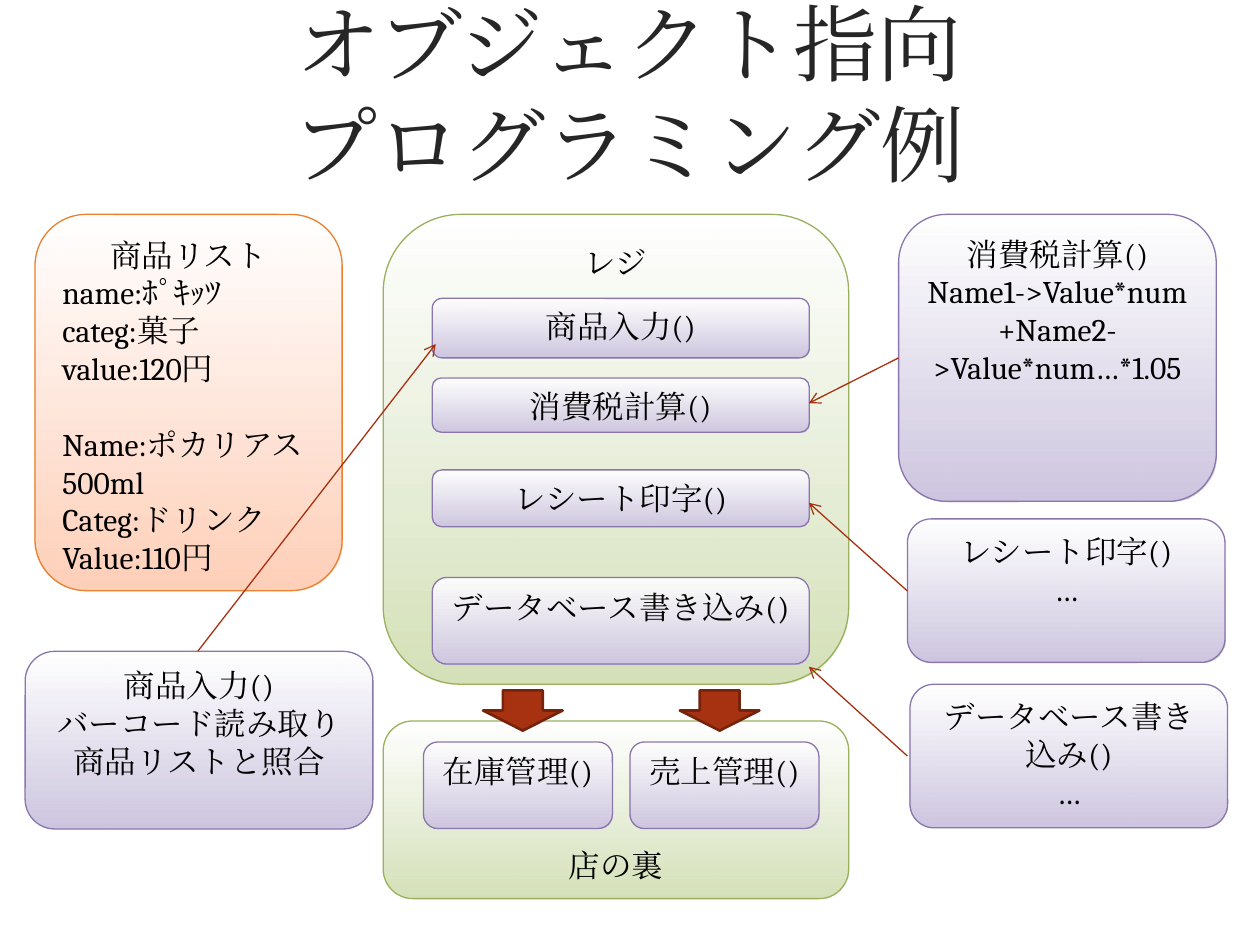
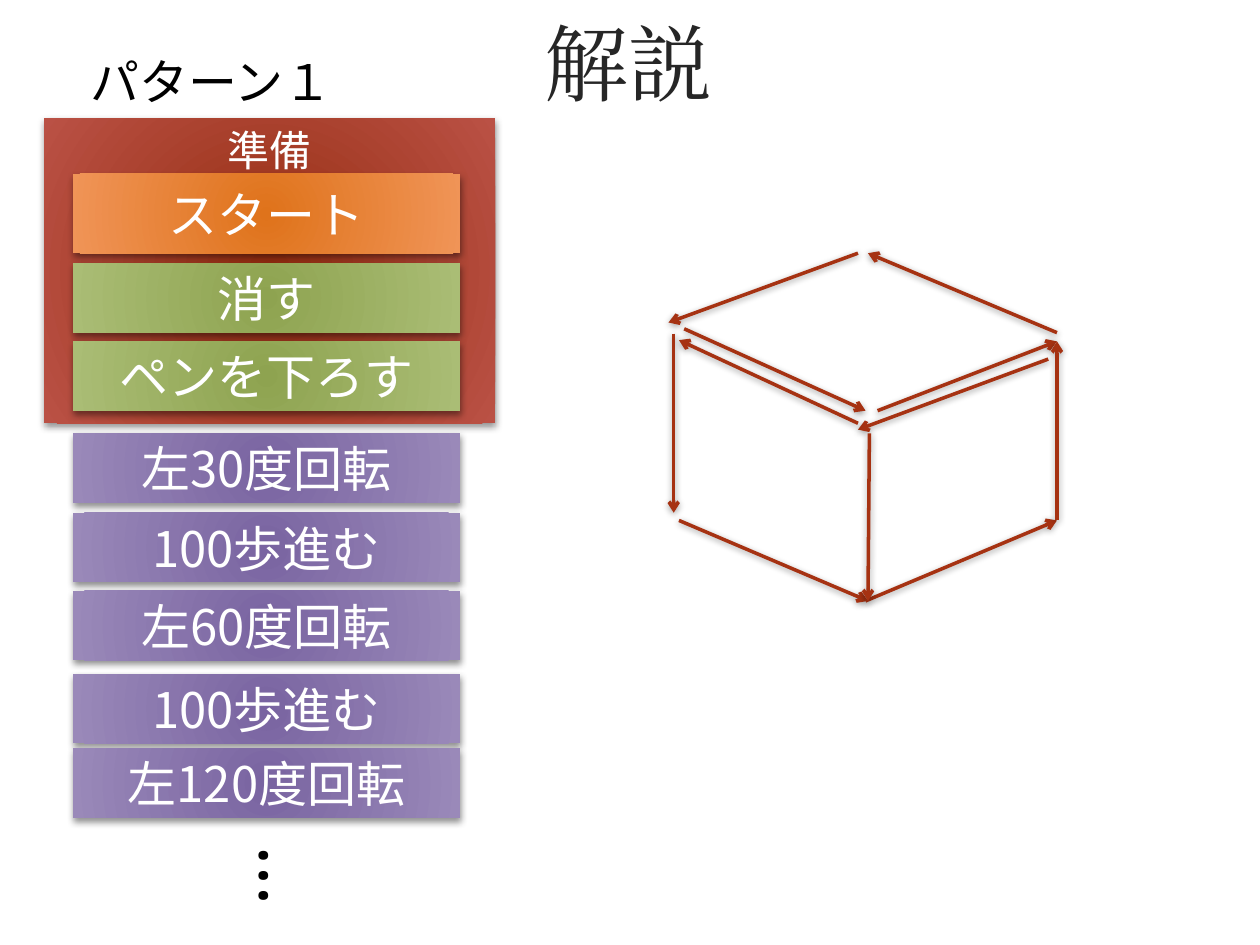
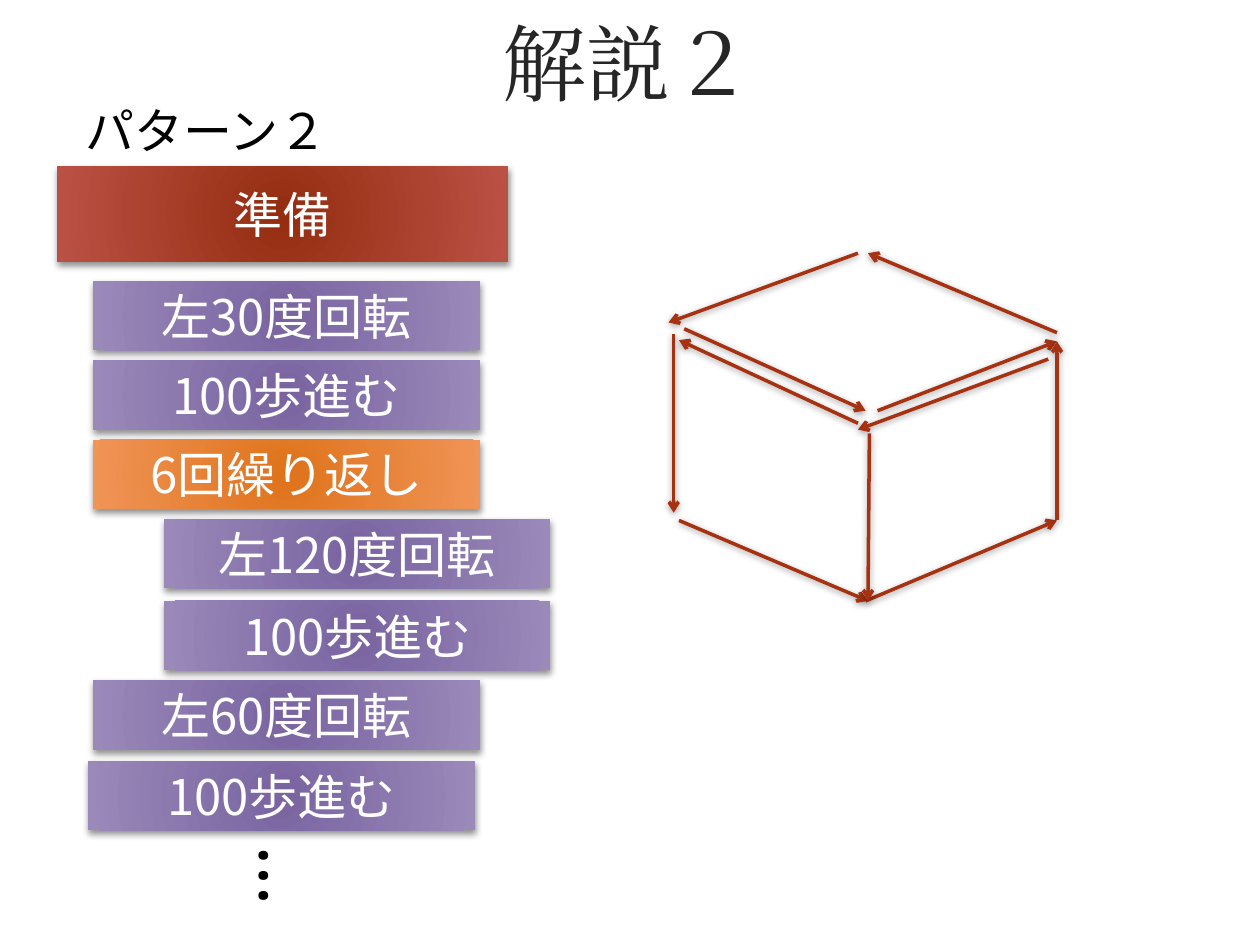
"""Build three slides on object-oriented programming and drawing a cube."""
from dataclasses import dataclass

import lxml.etree
import pptx
import pptx.dml.color
import pptx.enum.dml
import pptx.enum.shapes
import pptx.enum.text
import pptx.oxml.ns
import pptx.util

Pt = pptx.util.Pt
qn = pptx.oxml.ns.qn
SHAPE = pptx.enum.shapes.MSO_SHAPE
ANCHOR = pptx.enum.text.MSO_ANCHOR
ALIGN = pptx.enum.text.PP_ALIGN


@dataclass(frozen=True)
class Theme:
    """Colours, fonts and type sizes shared by the slides."""

    ink: str = "000000"
    title_ink: str = "262626"
    white: str = "FFFFFF"
    red: str = "A63212"
    red_edge: str = "75230C"
    serif: str = "Cambria"
    sans: str = "Noto Sans CJK JP"
    title: int = 48
    step: int = 28
    group: int = 24
    body: int = 18
    body_line: float = 21.7
    green_card: tuple = ("D5E1B9", "9BB05E")
    orange_card: tuple = ("FFD0B9", "E68230")
    purple_card: tuple = ("CEC6E0", "8976AC")
    red_block: tuple = ("952D10", "BA5145")
    orange_block: tuple = ("DF731B", "F09457")
    green_block: tuple = ("8EA350", "AABD75")
    purple_block: tuple = ("7964A1", "9A89B9")


T = Theme()
TITLE_BOX = (42.5, 0, 633, 71)
CUBE_BOX = (382, 144.7)
DOTS_BOX = (127.4, 473.8, 72.7, 48.2)
STEP_SIZE = (221, 39.6)
CUBE_EDGES = [
    ((119.5, 90), (222, 50.4)),
    ((222, 45.4), (114, 0)),
    ((108.3, 0), (0, 39.6)),
    ((3, 46), (3, 148.3)),
    ((6, 152.7), (114, 198.7)),
    ((112.6, 198.7), (222, 152.7)),
    ((222, 152.7), (222, 50.4)),
    ((217, 60.5), (108.3, 100.8)),
    ((9, 43.2), (112.6, 90)),
    ((108.3, 97.2), (6, 49.7)),
    ((114.8, 103), (114, 198.7)),
]


def rgb(value):
    """Return a colour object for a hex string."""
    return pptx.dml.color.RGBColor.from_string(value)


def assign(obj, values):
    """Set each named attribute of an object."""
    for name, value in values.items():
        setattr(obj, name, value)


def add_xml(parent, tag, **attrs):
    """Append a DrawingML element with the given attributes."""
    return lxml.etree.SubElement(parent, qn(tag), {k: str(v) for k, v in attrs.items()})


def write(s, lines, size, font, color, align=ALIGN.CENTER, anchor=ANCHOR.MIDDLE):
    """Fill a shape with paragraphs in one type style."""
    tf = s.text_frame
    assign(tf, {"word_wrap": True, "vertical_anchor": anchor})
    for i, line in enumerate(lines):
        p = tf.paragraphs[0] if i == 0 else tf.add_paragraph()
        assign(p, {"text": line, "alignment": align})
        for r in p.runs:
            assign(r.font, {"size": Pt(size), "name": font})
            r.font.color.rgb = rgb(color)
            add_xml(r.font._element, "a:ea", typeface=font)
    return tf


def add_shadow(effects, alpha, distance, angle):
    """Add a soft black shadow to an effect list."""
    shadow = add_xml(effects, "a:outerShdw", blurRad=Pt(4), dist=Pt(distance),
                     dir=angle * 60000, rotWithShape=0)
    color = add_xml(shadow, "a:srgbClr", val=T.ink)
    add_xml(color, "a:alpha", val=alpha * 1000)


def add_gradient(s, first, last):
    """Give a shape a downward two-colour gradient and return its element."""
    s.fill.gradient()
    s.fill.gradient_angle = 270
    for stop, color in zip(s.fill.gradient_stops, (first, last)):
        stop.color.rgb = rgb(color)
    return s.element.spPr.find(qn("a:gradFill"))


def add_box(sl, kind, box):
    """Add a preset shape without the default shadow."""
    s = sl.shapes.add_shape(kind, *map(Pt, box))
    s.shadow.inherit = False
    return s


def add_text(sl, box, lines, size, font, color, **layout):
    """Add a text box and return it."""
    s = sl.shapes.add_textbox(*map(Pt, box))
    write(s, lines, size, font, color, **layout)
    return s


def add_title(sl, text, box=TITLE_BOX):
    """Add the slide title."""
    add_text(sl, box, [text], T.title, T.serif, T.title_ink)


def add_card(sl, box, lines, colors=T.purple_card, anchor=ANCHOR.TOP):
    """Add a rounded card that fades from white."""
    s = add_box(sl, SHAPE.ROUNDED_RECTANGLE, box)
    grad = add_gradient(s, T.white, colors[0])
    add_xml(grad.find(".//" + qn("a:srgbClr")), "a:alpha", val=94000)
    s.line.color.rgb = rgb(colors[1])
    s.line.width = Pt(0.75)
    return write(s, lines, T.body, T.serif, T.ink, anchor=anchor)


def add_block(sl, box, text, colors, size=T.step, anchor=ANCHOR.MIDDLE):
    """Add a shadowed command block with a radial gradient."""
    s = add_box(sl, SHAPE.RECTANGLE, box)
    grad = add_gradient(s, *colors)
    grad.remove(grad.find(qn("a:lin")))
    radial = add_xml(grad, "a:path", path="circle")
    add_xml(radial, "a:fillToRect", l=40000, t=100000, r=40000, b=100000)
    s.line.fill.background()
    add_shadow(s.element.spPr.find(qn("a:effectLst")), 44, 2, 84)
    write(s, [text], size, T.sans, T.white, anchor=anchor)


def add_arrow(sl, start, end, width=0.75, shadow=False):
    """Add a straight red arrow."""
    s = sl.shapes.add_connector(pptx.enum.shapes.MSO_CONNECTOR.STRAIGHT,
                                *map(Pt, (*start, *end)))
    s.line.color.rgb = rgb(T.red)
    s.line.width = Pt(width)
    spPr = s._element.spPr
    add_xml(spPr.find(qn("a:ln")), "a:tailEnd", type="arrow")
    effects = add_xml(spPr, "a:effectLst")
    if shadow:
        add_shadow(effects, 37, 1, 90)


def add_register(sl, box):
    """Draw the register and its four methods."""
    x, y = box[:2]
    add_card(sl, box, ["レジ"], T.green_card)
    methods = [("商品入力()", 48, 34), ("消費税計算()", 93.5, 31),
               ("レシート印字()", 146, 32.5), ("データベース書き込み()", 207.5, 49.5)]
    for name, top, height in methods:
        add_card(sl, (x + 28, y + top, 215.5, height), [name])


def add_back_office(sl, box):
    """Draw the back office with its two methods and the arrows into it."""
    x, y = box[:2]
    add_card(sl, box, ["店の裏"], T.green_card, ANCHOR.BOTTOM)
    for i, name in enumerate(["在庫管理()", "売上管理()"]):
        add_card(sl, (x + 23 + 118 * i, y + 12, 108, 49.5), [name])
        s = add_box(sl, SHAPE.DOWN_ARROW, (x + 57 + 112.5 * i, y - 17.5, 45.5, 23))
        s.fill.solid()
        s.fill.fore_color.rgb = rgb(T.red)
        s.line.color.rgb = rgb(T.red_edge)
        s.line.width = Pt(1.5)


def add_product_list(sl, box):
    """Draw the product list with left-aligned records."""
    tf = add_card(sl, box, ["商品リスト", "name:ﾎﾟｷｯﾂ", "categ:菓子", "value:120円",
                            "Name:ポカリアス500ml", "Categ:ドリンク", "Value:110円"],
                  T.orange_card)
    for p in tf.paragraphs[1:]:
        p.alignment = ALIGN.LEFT
    tf.paragraphs[4].space_before = Pt(T.body_line)


def add_cube(sl, box):
    """Draw the cube as a path of arrows."""
    x, y = box
    for (x1, y1), (x2, y2) in CUBE_EDGES:
        add_arrow(sl, (x + x1, y + y1), (x + x2, y + y2), 2, True)


def add_steps(sl, box, steps):
    """Place command blocks at their offsets from a corner."""
    x, y = box
    for text, colors, left, top in steps:
        add_block(sl, (x + left, y + top, *STEP_SIZE), text, colors)


def objects_slide(sl):
    """Build the object diagram slide."""
    add_title(sl, "オブジェクト指向\vプログラミング例", (43, 17.3, 633, 71))
    add_back_office(sl, (219, 412, 266, 101.5))
    add_product_list(sl, (20, 122.5, 175.5, 215))
    add_register(sl, (219, 122.5, 266, 268.5))
    details = [
        ((513.5, 122.5, 181.5, 164),
         ["消費税計算()", "Name1->Value*num", "+Name2->Value*num…*1.05"]),
        ((518.5, 296.5, 181.5, 82), ["レシート印字()", "…"]),
        ((14.4, 372.2, 198.7, 101.5),
         ["商品入力()", "バーコード読み取り", "商品リストと照合"]),
        ((520, 391, 181.5, 82), ["データベース書き込み()", "…"]),
    ]
    for box, lines in details:
        add_card(sl, box, lines)
    for start, end in [((113, 372.2), (249, 196.6)), ((513.5, 204.5), (462.2, 230.4)),
                       ((518.5, 337.7), (462.2, 287.3)), ((518.5, 432), (462.2, 381))]:
        add_arrow(sl, start, end)


def pattern_slide(sl, title, label, label_box):
    """Build the title, label, cube and trailing dots of a pattern slide."""
    add_title(sl, title)
    add_text(sl, label_box, [label], T.step, T.sans, T.ink,
             align=ALIGN.LEFT, anchor=ANCHOR.TOP)
    s = add_text(sl, DOTS_BOX, ["…"], T.title, T.serif, T.ink,
                 align=ALIGN.LEFT, anchor=ANCHOR.TOP)
    s.element.txBody.find(qn("a:bodyPr")).set("vert", "eaVert")
    add_cube(sl, CUBE_BOX)


def first_pattern_slide(sl):
    """Build the slide that lists every step."""
    pattern_slide(sl, "解説", "パターン１", (44.6, 26, 238, 41))
    add_block(sl, (25.2, 67.7, 257.8, 174.2), "準備", T.red_block, T.group, ANCHOR.TOP)
    add_block(sl, (41.8, 99.4, 221, 45.4), "スタート", T.orange_block)
    add_steps(sl, (41.8, 150.5), [
        ("消す", T.green_block, 0, 0),
        ("ペンを下ろす", T.green_block, 0, 44.6),
        ("左30度回転", T.purple_block, 0, 97.2),
        ("100歩進む", T.purple_block, 0, 142.5),
        ("左60度回転", T.purple_block, 0, 187.2),
        ("100歩進む", T.purple_block, 0, 234.7),
        ("左120度回転", T.purple_block, 0, 277.2),
    ])


def second_pattern_slide(sl):
    """Build the slide that uses a loop."""
    pattern_slide(sl, "解説２", "パターン２", (41.8, 54, 238, 41))
    add_block(sl, (32.4, 95, 257.8, 54.7), "準備", T.red_block)
    add_steps(sl, (53.3, 160.6), [
        ("左30度回転", T.purple_block, 0, 0),
        ("100歩進む", T.purple_block, 0, 45.3),
        ("6回繰り返し", T.orange_block, 0, 90.6),
        ("左120度回転", T.purple_block, 40.3, 136),
        ("100歩進む", T.purple_block, 40.3, 182.8),
        ("左60度回転", T.purple_block, 0, 228.2),
        ("100歩進む", T.purple_block, -2.9, 274.3),
    ])


def main():
    """Create and save the presentation."""
    prs = pptx.Presentation()
    assign(prs, {"slide_width": Pt(720), "slide_height": Pt(540)})
    for build in (objects_slide, first_pattern_slide, second_pattern_slide):
        build(prs.slides.add_slide(prs.slide_layouts[6]))
    prs.save("out.pptx")


if __name__ == "__main__":
    main()
